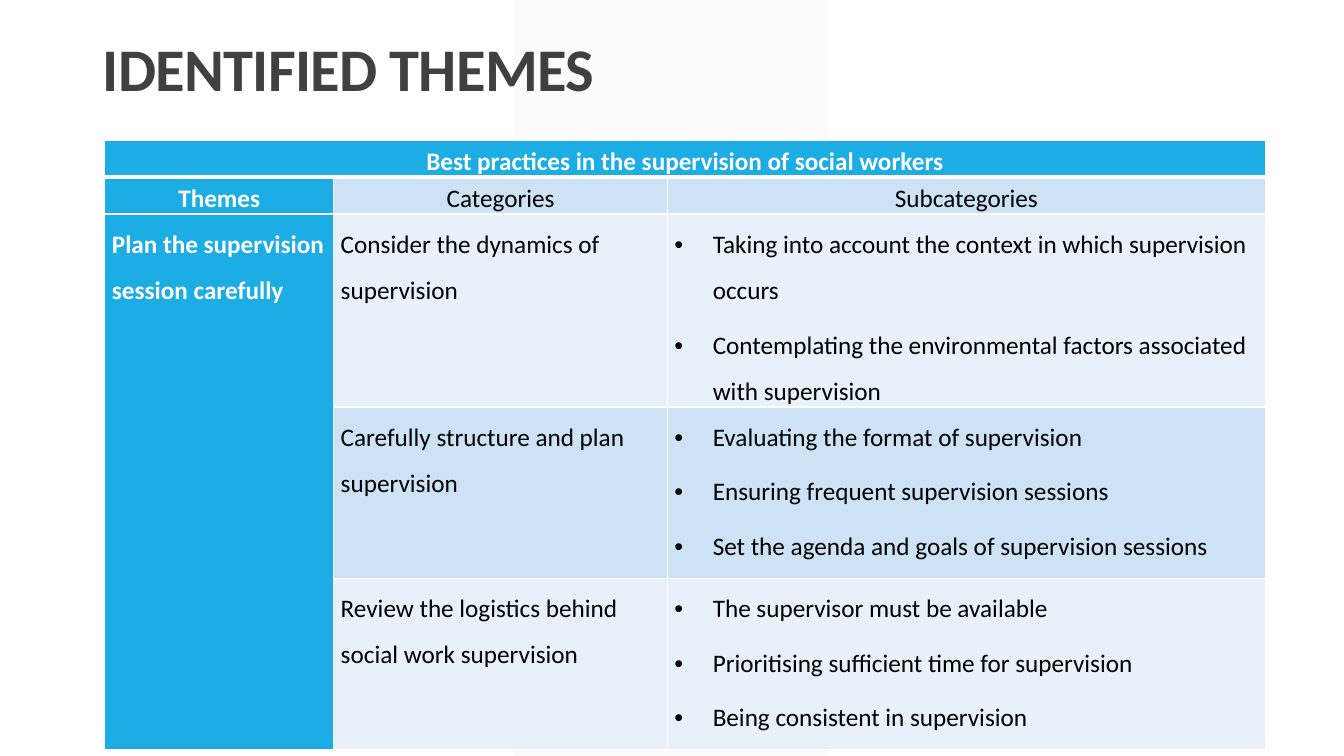
from dataclasses import dataclass

from lxml import etree
from pptx import Presentation
from pptx.dml.color import RGBColor
from pptx.enum.shapes import MSO_SHAPE
from pptx.enum.text import MSO_ANCHOR, PP_ALIGN
from pptx.oxml.ns import qn
from pptx.slide import Slide
from pptx.table import Table, _Cell
from pptx.text.text import _Paragraph
from pptx.util import Inches, Pt

PARALLELOGRAM = MSO_SHAPE.PARALLELOGRAM
TOP = MSO_ANCHOR.TOP
LEFT, CENTER = PP_ALIGN.LEFT, PP_ALIGN.CENTER


@dataclass(frozen=True)
class Theme:
    font: str = "Calibri"
    title_size: float = 43.2
    table_size: float = 18
    title: str = "404040"
    body: str = "000000"
    white: str = "FFFFFF"
    accent: str = "1CADE4"
    dark_band: str = "CDE3F5"
    light_band: str = "E8F1FA"
    backdrop: str = "F2F2F2"


@dataclass(frozen=True)
class CellStyle:
    fill: str
    color: str = "000000"
    bold: bool = False
    alignment: PP_ALIGN = LEFT
    line_spacing: float = 1.5
    bulleted: bool = False


@dataclass(frozen=True)
class Category:
    name: str
    subcategories: tuple[str, ...]


THEME = Theme()
HEADING = CellStyle(THEME.accent, THEME.white, True, CENTER, 1.2)
COLUMN_HEADING = CellStyle(THEME.dark_band, THEME.body, False, CENTER, 1.2)
THEME_NAME = CellStyle(THEME.accent, THEME.white, True)
BANDS = (THEME.light_band, THEME.dark_band)

COLUMN_WIDTHS = (2.27, 3.31, 5.93)
ROW_HEIGHTS = (0.33, 0.33, 1.58, 1.7, 1.7)
FIRST_CATEGORY_ROW = 2

CATEGORIES = (
    Category("Consider the dynamics of supervision", (
        "Taking into account the context in which supervision occurs",
        "Contemplating the environmental factors associated with supervision",
    )),
    Category("Carefully structure and plan supervision", (
        "Evaluating the format of supervision",
        "Ensuring frequent supervision sessions",
        "Set the agenda and goals of supervision sessions",
    )),
    Category("Review the logistics behind social work supervision", (
        "The supervisor must be available",
        "Prioritising sufficient time for supervision",
        "Being consistent in supervision",
    )),
)


def add_backdrop(slide: Slide) -> None:
    shape = slide.shapes.add_shape(
        PARALLELOGRAM, Inches(5.1), Inches(0), Inches(3.12), Inches(7.5))
    shape.adjustments[0] = 0
    shape.shadow.inherit = False
    shape.line.fill.background()
    shape.fill.solid()
    shape.fill.fore_color.rgb = RGBColor.from_string(THEME.backdrop)
    color = shape.fill._xPr.find(qn("a:solidFill"))[0]
    etree.SubElement(color, qn("a:alpha"), val="30000")


def format_runs(paragraph: _Paragraph, size: float, color: str, bold: bool) -> None:
    for run in paragraph.runs:
        run.font.name = THEME.font
        run.font.size = Pt(size)
        run.font.bold = bold
        run.font.color.rgb = RGBColor.from_string(color)


def add_title(slide: Slide, text: str) -> None:
    text_box = slide.shapes.add_textbox(
        Inches(0.92), Inches(0.4), Inches(11.5), Inches(1.28))
    text_frame = text_box.text_frame
    text_frame.word_wrap = True
    text_frame.vertical_anchor = TOP
    text_frame.text = text
    paragraph = text_frame.paragraphs[0]
    paragraph.line_spacing = 0.8
    format_runs(paragraph, THEME.title_size, THEME.title, True)
    for run in paragraph.runs:
        run.font._element.set("spc", "-50")


def add_bullet(paragraph: _Paragraph) -> None:
    properties = paragraph._p.get_or_add_pPr()
    properties.set("marL", str(Inches(0.38)))
    properties.set("indent", str(Inches(-0.38)))
    etree.SubElement(properties, qn("a:buFont"), typeface="Arial")
    etree.SubElement(properties, qn("a:buChar"), char="•")


def set_borders(cell: _Cell, top: float = 1, bottom: float = 1) -> None:
    """Draw white borders; widths are in points."""
    properties = cell._tc.get_or_add_tcPr()
    widths = {"lnL": 1, "lnR": 1, "lnT": top, "lnB": bottom}
    for position, (side, width) in enumerate(widths.items()):
        line = etree.Element(qn(f"a:{side}"), w=str(Pt(width)))
        fill = etree.SubElement(line, qn("a:solidFill"))
        etree.SubElement(fill, qn("a:srgbClr"), val=THEME.white)
        properties.insert(position, line)


def fill_cell(cell: _Cell, lines: tuple[str, ...], style: CellStyle) -> None:
    cell.fill.solid()
    cell.fill.fore_color.rgb = RGBColor.from_string(style.fill)
    cell.text_frame.text = "\n".join(lines)
    for paragraph in cell.text_frame.paragraphs:
        paragraph.alignment = style.alignment
        paragraph.line_spacing = style.line_spacing
        paragraph.space_before = paragraph.space_after = Pt(3)
        if style.bulleted:
            add_bullet(paragraph)
        format_runs(paragraph, THEME.table_size, style.color, style.bold)


def format_grid(table: Table) -> None:
    table.first_row = table.horz_banding = False
    for column, width in zip(table.columns, COLUMN_WIDTHS):
        column.width = Inches(width)
    for index, (row, height) in enumerate(zip(table.rows, ROW_HEIGHTS)):
        row.height = Inches(height)
        for cell in row.cells:
            cell.margin_left = cell.margin_right = Inches(0.07)
            cell.margin_top = cell.margin_bottom = Inches(0)
            set_borders(cell, 3 if index == 1 else 1, 3 if index == 0 else 1)


def add_themes_table(slide: Slide) -> None:
    table = slide.shapes.add_table(
        len(ROW_HEIGHTS), len(COLUMN_WIDTHS), Inches(1.04), Inches(1.39),
        Inches(sum(COLUMN_WIDTHS)), Inches(sum(ROW_HEIGHTS))).table
    format_grid(table)
    table.cell(0, 0).merge(table.cell(0, 2))
    table.cell(FIRST_CATEGORY_ROW, 0).merge(table.cell(len(ROW_HEIGHTS) - 1, 0))

    fill_cell(table.cell(0, 0),
              ("Best practices in the supervision of social workers",), HEADING)
    fill_cell(table.cell(1, 0), ("Themes",), HEADING)
    fill_cell(table.cell(1, 1), ("Categories",), COLUMN_HEADING)
    fill_cell(table.cell(1, 2), ("Subcategories",), COLUMN_HEADING)
    fill_cell(table.cell(FIRST_CATEGORY_ROW, 0),
              ("Plan the supervision session carefully",), THEME_NAME)
    for index, category in enumerate(CATEGORIES):
        row = FIRST_CATEGORY_ROW + index
        band = BANDS[index % len(BANDS)]
        fill_cell(table.cell(row, 1), (category.name,), CellStyle(band))
        fill_cell(table.cell(row, 2), category.subcategories,
                  CellStyle(band, bulleted=True))


def main() -> None:
    presentation = Presentation()
    presentation.slide_width = Inches(13.33)
    presentation.slide_height = Inches(7.5)
    slide = presentation.slides.add_slide(presentation.slide_layouts[6])
    add_backdrop(slide)
    add_themes_table(slide)
    add_title(slide, "IDENTIFIED THEMES")
    presentation.save("out.pptx")


if __name__ == "__main__":
    main()
